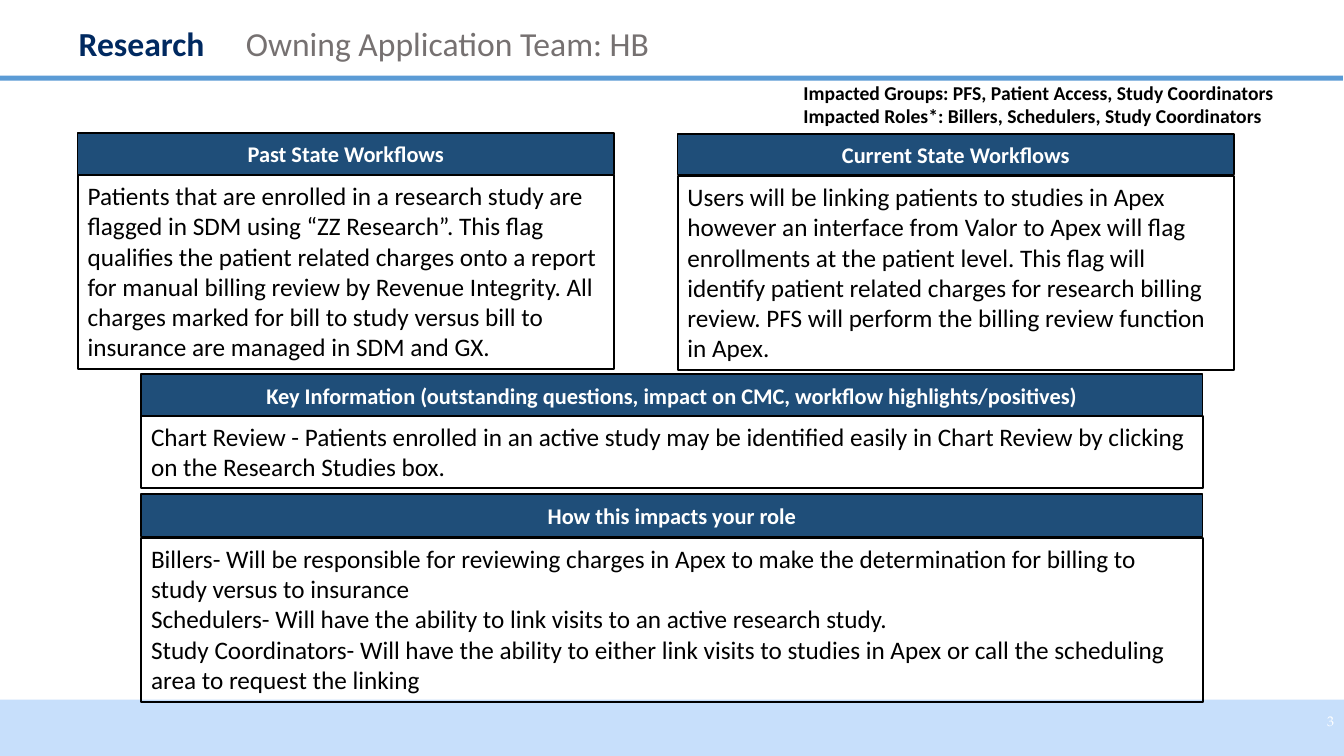
from pptx import Presentation
from pptx.dml.color import RGBColor
from pptx.enum.shapes import MSO_SHAPE
from pptx.enum.text import MSO_ANCHOR, MSO_AUTO_SIZE, PP_ALIGN
from pptx.util import Inches, Pt

RECTANGLE = MSO_SHAPE.RECTANGLE
TOP, MIDDLE = MSO_ANCHOR.TOP, MSO_ANCHOR.MIDDLE
LEFT, CENTER, RIGHT = PP_ALIGN.LEFT, PP_ALIGN.CENTER, PP_ALIGN.RIGHT
NO_AUTOFIT = MSO_AUTO_SIZE.NONE
TITLE_ONLY = 5

COLORS = {
    "title": "002960",
    "subtitle": "767171",
    "rule": "5B9BD5",
    "footer": "C7DFFB",
    "header": "1F4E79",
    "black": "000000",
    "white": "FFFFFF",
}

# Content: boxes are left, top, width, height in inches
TITLE = "Research"
TITLE_BOX = (0.68, 0.14, 11.01, 0.62)

BANDS = [
    ("footer", (0, 6.94, 13.33, 0.56)),
    ("rule", (0, 0.75, 13.32, 0.05)),
]

LABELS = [
    {"lines": ["Owning Application Team: HB"], "box": (2.34, 0.18, 4.47, 0.5),
     "size": 24, "color": "subtitle"},
    {"lines": ["Impacted Groups: PFS, Patient Access, Study Coordinators",
               "Impacted Roles*: Billers, Schedulers, Study Coordinators"],
     "box": (7.87, 0.75, 5.28, 0.81), "size": 14, "color": "black", "bold": True},
    {"lines": ["3"], "box": (10.33, 6.95, 3, 0.4), "size": 10, "color": "white",
     "font": "TeX Gyre Pagella", "align": RIGHT, "anchor": MIDDLE},
]

# Panels: heading, left, width, heading top and height, body top and height, body lines
PANELS = [
    ("Past State Workflows", 0.77, 5.32, (1.32, 0.41), (1.74, 1.92), [
        "Patients that are enrolled in a research study are flagged in SDM using "
        "“ZZ Research”. This flag qualifies the patient related charges onto a report "
        "for manual billing review by Revenue Integrity. All charges marked for bill "
        "to study versus bill to insurance are managed in SDM and GX."]),
    ("Current State Workflows", 6.72, 5.52, (1.33, 0.4), (1.75, 1.92), [
        "Users will be linking patients to studies in Apex however an interface from "
        "Valor to Apex will flag enrollments at the patient level. This flag will "
        "identify patient related charges for research billing review. PFS will "
        "perform the billing review function in Apex."]),
    ("Key Information (outstanding questions, impact on CMC, workflow highlights/positives)",
     1.4, 10.53, (3.71, 0.42), (4.13, 0.71), [
         "Chart Review - Patients enrolled in an active study may be identified easily "
         "in Chart Review by clicking on the Research Studies box."]),
    ("How this impacts your role", 1.4, 10.53, (4.9, 0.42), (5.34, 1.62), [
        "Billers- Will be responsible for reviewing charges in Apex to make the "
        "determination for billing to study versus to insurance",
        "Schedulers- Will have the ability to link visits to an active research study.",
        "Study Coordinators- Will have the ability to either link visits to studies in "
        "Apex or call the scheduling area to request the linking"]),
]


def color(name):
    return RGBColor.from_string(COLORS[name])


def inches(box):
    return [Inches(value) for value in box]


def write(shape, lines, size, color_name, bold=False, font="Calibri",
          align=LEFT, anchor=TOP):
    frame = shape.text_frame
    frame.word_wrap = True
    frame.auto_size = NO_AUTOFIT
    frame.vertical_anchor = anchor
    for index, line in enumerate(lines):
        paragraph = frame.add_paragraph() if index else frame.paragraphs[0]
        paragraph.alignment = align
        run = paragraph.add_run()
        run.text = line
        run.font.size = Pt(size)
        run.font.name = font
        run.font.bold = bold
        run.font.color.rgb = color(color_name)


def add_rectangle(slide, box, fill=None, line_width=None):
    shape = slide.shapes.add_shape(RECTANGLE, *inches(box))
    shape.shadow.inherit = False
    if fill:
        shape.fill.solid()
        shape.fill.fore_color.rgb = color(fill)
    else:
        shape.fill.background()
    if line_width:
        shape.line.color.rgb = color("black")
        shape.line.width = Pt(line_width)
    else:
        shape.line.fill.background()
    return shape


def main():
    presentation = Presentation()
    presentation.slide_width = Inches(13.33)
    presentation.slide_height = Inches(7.5)
    slide = presentation.slides.add_slide(presentation.slide_layouts[TITLE_ONLY])

    # Header rule and footer band
    for fill, box in BANDS:
        add_rectangle(slide, box, fill)

    # Title
    title = slide.shapes.title
    title.left, title.top, title.width, title.height = inches(TITLE_BOX)
    write(title, [TITLE], 24, "title", bold=True, anchor=MIDDLE)
    title.text_frame.paragraphs[0].line_spacing = 0.9

    # Subtitle, impacted groups and page number
    for label in LABELS:
        style = {key: value for key, value in label.items()
                 if key not in ("lines", "box", "size", "color")}
        text_box = slide.shapes.add_textbox(*inches(label["box"]))
        write(text_box, label["lines"], label["size"], label["color"], **style)

    # Panels with a heading bar above a framed body
    for heading, left, width, heading_span, body_span, lines in PANELS:
        heading_top, heading_height = heading_span
        bar = add_rectangle(slide, (left, heading_top, width, heading_height), "header", 1)
        write(bar, [heading], 16, "white", bold=True, align=CENTER, anchor=MIDDLE)
        body_top, body_height = body_span
        body = add_rectangle(slide, (left, body_top, width, body_height), line_width=1.5)
        write(body, lines, 18, "black")

    presentation.save("out.pptx")


if __name__ == "__main__":
    main()
